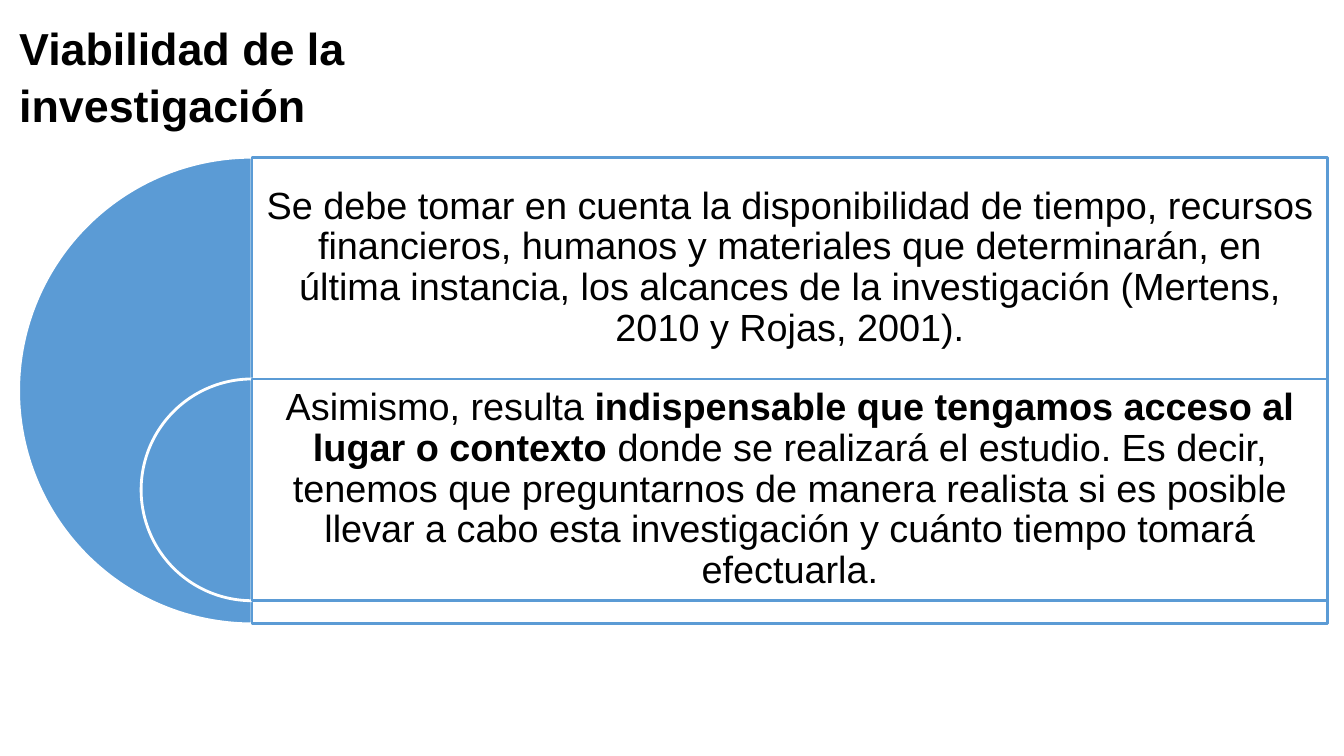
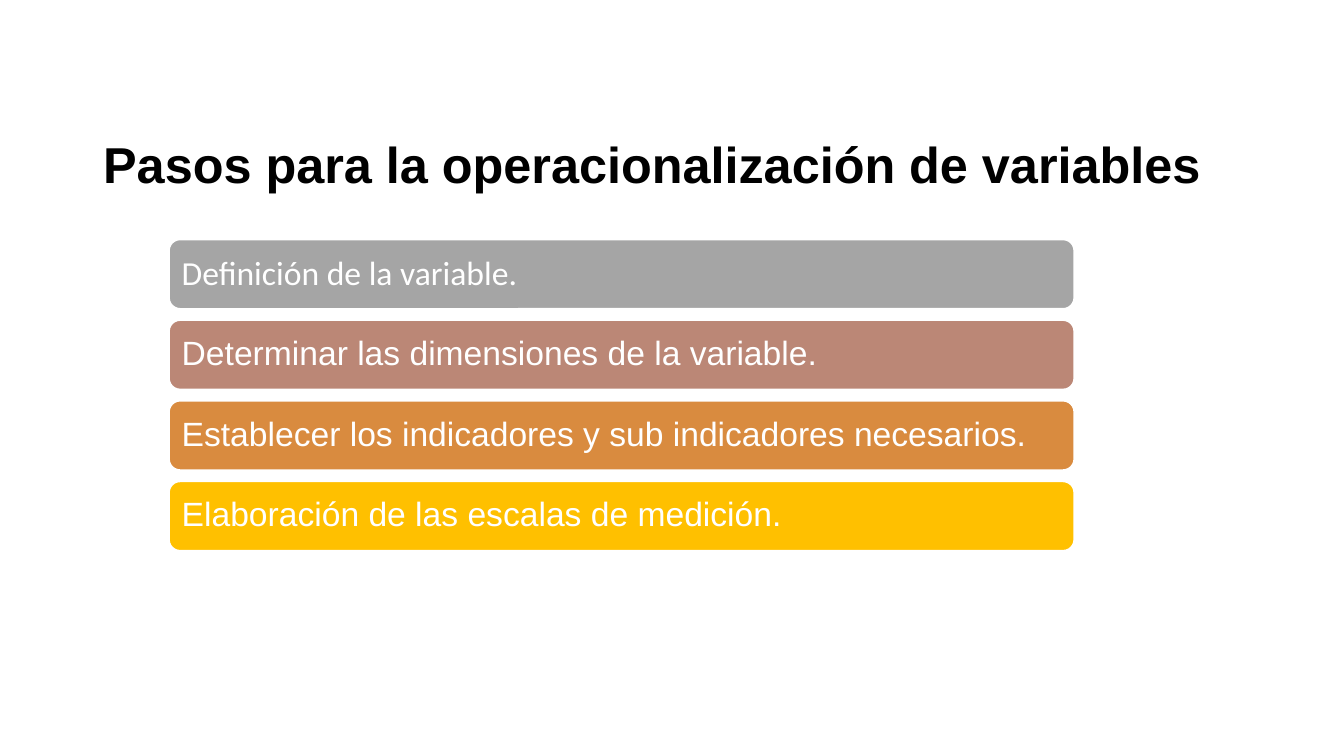
"""Build two slides on research viability and operationalising variables."""
from pptx import Presentation
from pptx.dml.color import RGBColor
from pptx.enum.shapes import MSO_SHAPE as Preset
from pptx.enum.text import MSO_ANCHOR as Anchor, MSO_AUTO_SIZE as AutoSize, PP_ALIGN as Align
from pptx.util import Inches, Pt

BLACK = RGBColor(0x00, 0x00, 0x00)
WHITE = RGBColor(0xFF, 0xFF, 0xFF)
BLUE = RGBColor(0x5B, 0x9B, 0xD5)
GREY = RGBColor(0xA5, 0xA5, 0xA5)
ROSE = RGBColor(0xBB, 0x87, 0x76)
ORANGE = RGBColor(0xD9, 0x8B, 0x3F)
GOLD = RGBColor(0xFF, 0xC0, 0x00)

VIABILITY = [
    [("Se debe tomar en cuenta la disponibilidad de tiempo, recursos financieros, humanos y "
      "materiales que determinarán, en última instancia, los alcances de la investigación "
      "(Mertens, 2010 y Rojas, 2001).", False)],
    [("Asimismo, resulta ", False),
     ("indispensable que tengamos acceso al lugar o contexto ", True),
     ("donde se realizará el estudio. Es decir, tenemos que preguntarnos de manera realista si es "
      "posible llevar a cabo esta investigación y cuánto tiempo tomará efectuarla.", False)],
]
STEPS = [
    ("Definición de la variable.", GREY, "Calibri"),
    ("Determinar las dimensiones de la variable.", ROSE, "Arial"),
    ("Establecer los indicadores y sub indicadores necesarios.", ORANGE, "Arial"),
    ("Elaboración de las escalas de medición.", GOLD, "Arial"),
]

PANEL_LEFT, PANEL_TOP, PANEL_WIDTH = 2.5, 1.56, 10.67
ROW_HEIGHT = 2.2
DIAMETERS = [4.63, ROW_HEIGHT]
PANEL_INSET = 0.11
STEP_LEFT, STEP_TOP, STEP_WIDTH, STEP_HEIGHT = 1.67, 2.37, 8.99, 0.7
STEP_PITCH = 0.8


def add_page(deck, title, area, size, align):
    page = deck.slides.add_slide(deck.slide_layouts[5])
    box = page.shapes.title
    box.left, box.top, box.width, box.height = map(Inches, area)
    frame = box.text_frame
    frame.text = title
    frame.word_wrap = True
    frame.auto_size = AutoSize.NONE
    frame.vertical_anchor = Anchor.TOP
    para = frame.paragraphs[0]
    para.line_spacing = 1.05
    style(para, size, BLACK, align)
    para.font.bold = True
    return page


def style(para, size, colour, align, font="Arial"):
    para.alignment = align
    para.font.name = font
    para.font.size = Pt(size)
    para.font.color.rgb = colour


def add_block(page, preset, area, fill, line):
    block = page.shapes.add_shape(preset, *map(Inches, area))
    block.shadow.inherit = False
    block.fill.solid()
    block.fill.fore_color.rgb = fill
    block.line.color.rgb = line
    block.line.width = Pt(2)
    return block


def write(block, spans, margins, size, colour, align, font="Arial"):
    frame = block.text_frame
    frame.word_wrap = True
    frame.vertical_anchor = Anchor.MIDDLE
    (frame.margin_left, frame.margin_top,
     frame.margin_right, frame.margin_bottom) = map(Inches, margins)
    para = frame.paragraphs[0]
    para.line_spacing = 0.9
    style(para, size, colour, align, font)
    for text, bold in spans:
        span = para.add_run()
        span.text = text
        if bold:
            span.font.bold = True


def build_viability(deck):
    page = add_page(deck, "Viabilidad de la investigación",
                    (0.09, 0.13, 5.6, 1.18), 32, Align.LEFT)
    for row, (spans, diameter) in enumerate(zip(VIABILITY, DIAMETERS)):
        top = PANEL_TOP + row * ROW_HEIGHT
        half_disc = add_block(page, Preset.PIE,
                              (PANEL_LEFT - diameter / 2, top, diameter, diameter), BLUE, WHITE)
        half_disc.adjustments[0] = 54
        half_disc.adjustments[1] = 162
        panel = add_block(page, Preset.RECTANGLE,
                          (PANEL_LEFT, top, PANEL_WIDTH, diameter), WHITE, BLUE)
        bottom = PANEL_INSET + diameter - ROW_HEIGHT
        write(panel, spans, (PANEL_INSET, PANEL_INSET, PANEL_INSET, bottom),
              27, BLACK, Align.CENTER)


def build_steps(deck):
    page = add_page(deck, "Pasos para la operacionalización de variables",
                    (0.8, 1.24, 11.34, 0.71), 36, Align.CENTER)
    for row, (text, colour, font) in enumerate(STEPS):
        area = (STEP_LEFT, STEP_TOP + row * STEP_PITCH, STEP_WIDTH, STEP_HEIGHT)
        bar = add_block(page, Preset.ROUNDED_RECTANGLE, area, colour, WHITE)
        write(bar, [(text, False)], (0.1, 0.1, 0.1, 0.1), 24, WHITE, Align.LEFT, font)


def main():
    deck = Presentation()
    deck.slide_width, deck.slide_height = Inches(13.33), Inches(7.5)
    build_viability(deck)
    build_steps(deck)
    deck.save("out.pptx")


if __name__ == "__main__":
    main()
